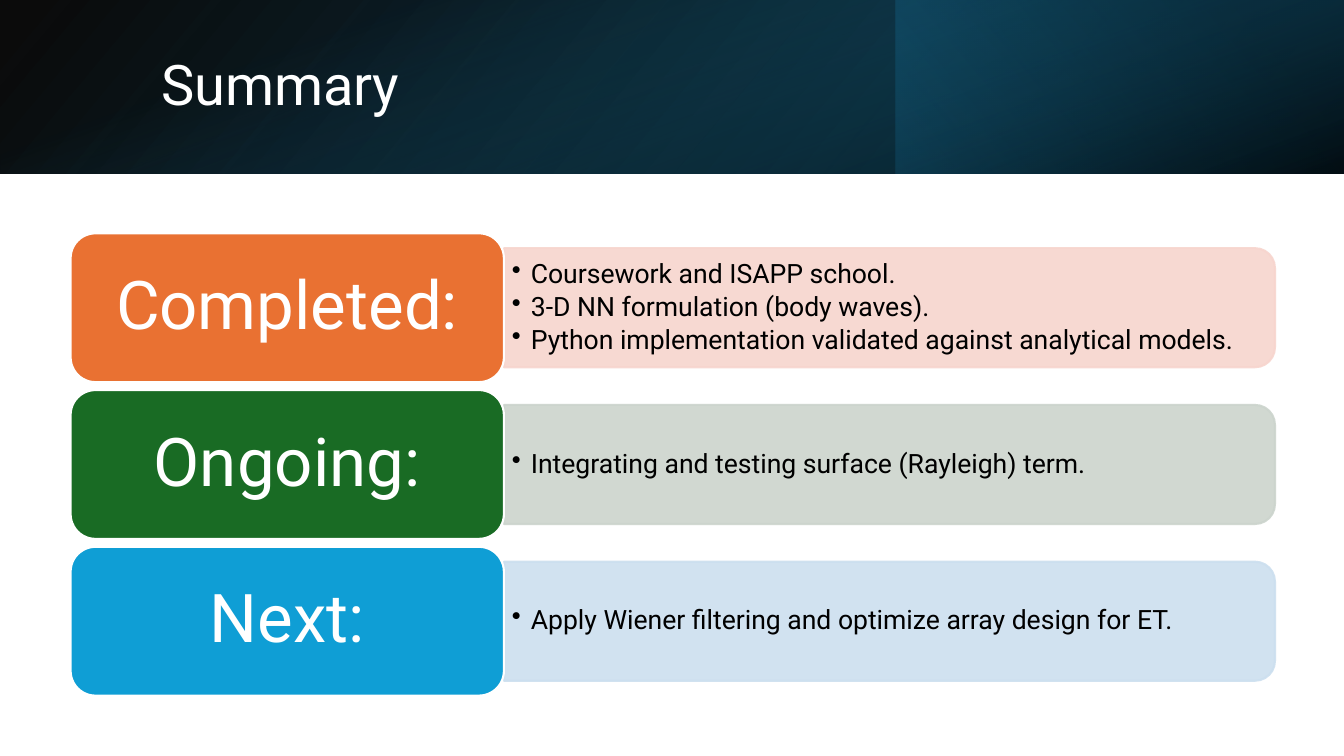
from dataclasses import dataclass

from lxml.etree import SubElement
from pptx import Presentation
from pptx.dml.color import RGBColor
from pptx.enum.shapes import MSO_SHAPE
from pptx.enum.text import MSO_ANCHOR, PP_ALIGN
from pptx.oxml.ns import qn
from pptx.shapes.autoshape import Shape
from pptx.slide import Slide
from pptx.text.text import TextFrame, _Paragraph
from pptx.util import Cm, Pt

FONT = "Roboto"
WHITE = RGBColor(0xFF, 0xFF, 0xFF)
BLACK = RGBColor(0x00, 0x00, 0x00)
DEEP_TEAL = RGBColor(0x10, 0x48, 0x62)
NIGHT_TEAL = RGBColor(0x0B, 0x30, 0x41)
TEAL = RGBColor(0x15, 0x60, 0x82)
ORANGE = RGBColor(0xE9, 0x71, 0x32)
PALE_ORANGE = RGBColor(0xF7, 0xD5, 0xCE)
GREEN = RGBColor(0x19, 0x6B, 0x24)
PALE_GREEN = RGBColor(0xCC, 0xD4, 0xCD)
BLUE = RGBColor(0x0F, 0x9E, 0xD5)
PALE_BLUE = RGBColor(0xCC, 0xDF, 0xEF)

# Lengths in centimetres
SLIDE_W, SLIDE_H = 33.87, 19.05
HEADER_H = 4.38
LABEL_LEFT, LABEL_TOP, LABEL_W, LABEL_H = 1.78, 5.88, 10.92, 3.75
STAGE_PITCH = 3.95
BAND_LEFT, BAND_W, BAND_H = LABEL_LEFT + LABEL_W, 19.43, 3.0
POINTS_W, POINTS_H = 19.28, 2.72
BULLET_INDENT = 0.48


@dataclass(frozen=True)
class Stop:
    position: float
    color: RGBColor
    opacity: int


@dataclass(frozen=True)
class HeaderLayer:
    left: float
    top: float
    width: float
    height: float
    rotation: int
    angle: int  # clockwise degrees
    stops: tuple[Stop, Stop]


@dataclass(frozen=True)
class Stage:
    label: str
    color: RGBColor
    band_color: RGBColor
    points: tuple[str, ...]


HEADER_LAYERS = (
    HeaderLayer(0, 0, SLIDE_W, HEADER_H, 0, 40,
                (Stop(0, BLACK, 96), Stop(1, DEEP_TEAL, 100))),
    HeaderLayer(22.58, 0, 11.29, HEADER_H, 180, 320,
                (Stop(0.19, NIGHT_TEAL, 68), Stop(1, TEAL, 79))),
    HeaderLayer((SLIDE_W - HEADER_H) / 2, (HEADER_H - SLIDE_W) / 2, HEADER_H, SLIDE_W,
                90, 340, (Stop(0.23, TEAL, 0), Stop(0.99, BLACK, 74))),
)

STAGES = (
    Stage("Completed:", ORANGE, PALE_ORANGE, (
        "Coursework and ISAPP school.",
        "3-D NN formulation (body waves).",
        "Python implementation validated against analytical models.",
    )),
    Stage("Ongoing:", GREEN, PALE_GREEN,
          ("Integrating and testing surface (Rayleigh) term.",)),
    Stage("Next:", BLUE, PALE_BLUE,
          ("Apply Wiener filtering and optimize array design for ET.",)),
)


def set_opacities(shape: Shape, opacities: list[int]) -> None:
    colors = shape.element.spPr.iter(qn("a:srgbClr"))
    for color, opacity in zip(colors, opacities):
        SubElement(color, qn("a:alpha")).set("val", str(opacity * 1000))


def add_plain_shape(slide: Slide, kind: MSO_SHAPE, left: float, top: float,
                    width: float, height: float) -> Shape:
    shape = slide.shapes.add_shape(kind, Cm(left), Cm(top), Cm(width), Cm(height))
    shape.shadow.inherit = False
    return shape


def fill_and_outline(shape: Shape, fill: RGBColor, outline: RGBColor) -> None:
    shape.fill.solid()
    shape.fill.fore_color.rgb = fill
    shape.line.color.rgb = outline
    shape.line.width = Pt(1.5)


def set_up_frame(frame: TextFrame, inset_x: float, inset_y: float) -> None:
    frame.word_wrap = True
    frame.vertical_anchor = MSO_ANCHOR.MIDDLE
    frame.margin_left = frame.margin_right = Cm(inset_x)
    frame.margin_top = frame.margin_bottom = Cm(inset_y)


def add_text(paragraph: _Paragraph, text: str, size: int, color: RGBColor) -> None:
    paragraph.line_spacing = 0.9
    run = paragraph.add_run()
    run.text = text
    run.font.name = FONT
    run.font.size = Pt(size)
    run.font.color.rgb = color


def add_bullet(paragraph: _Paragraph) -> None:
    properties = paragraph._p.get_or_add_pPr()
    properties.set("marL", str(Cm(BULLET_INDENT)))
    properties.set("indent", str(-Cm(BULLET_INDENT)))
    SubElement(properties, qn("a:buChar")).set("char", "•")


def add_header_layer(slide: Slide, layer: HeaderLayer) -> None:
    panel = add_plain_shape(slide, MSO_SHAPE.RECTANGLE, layer.left, layer.top,
                            layer.width, layer.height)
    panel.rotation = layer.rotation
    panel.line.fill.background()
    panel.fill.gradient()
    panel.fill.gradient_angle = 360 - layer.angle
    for gradient_stop, stop in zip(panel.fill.gradient_stops, layer.stops):
        gradient_stop.position = stop.position
        gradient_stop.color.rgb = stop.color
    set_opacities(panel, [stop.opacity for stop in layer.stops])


def add_title(slide: Slide) -> None:
    title = slide.shapes.add_textbox(Cm(3.81), Cm(0.97), Cm(27.89), Cm(2.44))
    set_up_frame(title.text_frame, 0.25, 0.13)
    add_text(title.text_frame.paragraphs[0], "Summary", 40, WHITE)


def add_stage(slide: Slide, stage: Stage, top: float) -> None:
    middle = top + LABEL_H / 2

    # Pale band, turned so that its rounded end faces right
    band = add_plain_shape(slide, MSO_SHAPE.ROUND_2_SAME_RECTANGLE,
                           BAND_LEFT + (BAND_W - BAND_H) / 2, middle - BAND_W / 2,
                           BAND_H, BAND_W)
    band.rotation = 90
    fill_and_outline(band, stage.band_color, stage.band_color)
    set_opacities(band, [90, 90])

    # Bulleted points
    points = slide.shapes.add_textbox(Cm(BAND_LEFT), Cm(middle - POINTS_H / 2),
                                      Cm(POINTS_W), Cm(POINTS_H))
    frame = points.text_frame
    set_up_frame(frame, 0.2, 0.1)
    for index, point in enumerate(stage.points):
        paragraph = frame.add_paragraph() if index else frame.paragraphs[0]
        paragraph.space_after = Pt(3)
        add_text(paragraph, point, 19, BLACK)
        add_bullet(paragraph)

    # Coloured label
    label = add_plain_shape(slide, MSO_SHAPE.ROUNDED_RECTANGLE,
                            LABEL_LEFT, top, LABEL_W, LABEL_H)
    fill_and_outline(label, stage.color, WHITE)
    set_up_frame(label.text_frame, 0.5, 0.25)
    heading = label.text_frame.paragraphs[0]
    heading.alignment = PP_ALIGN.CENTER
    add_text(heading, stage.label, 48, WHITE)


def main() -> None:
    presentation = Presentation()
    presentation.slide_width = Cm(SLIDE_W)
    presentation.slide_height = Cm(SLIDE_H)
    slide = presentation.slides.add_slide(presentation.slide_layouts[6])
    for layer in HEADER_LAYERS:
        add_header_layer(slide, layer)
    add_title(slide)
    for index, stage in enumerate(STAGES):
        add_stage(slide, stage, LABEL_TOP + index * STAGE_PITCH)
    presentation.save("out.pptx")


if __name__ == "__main__":
    main()
